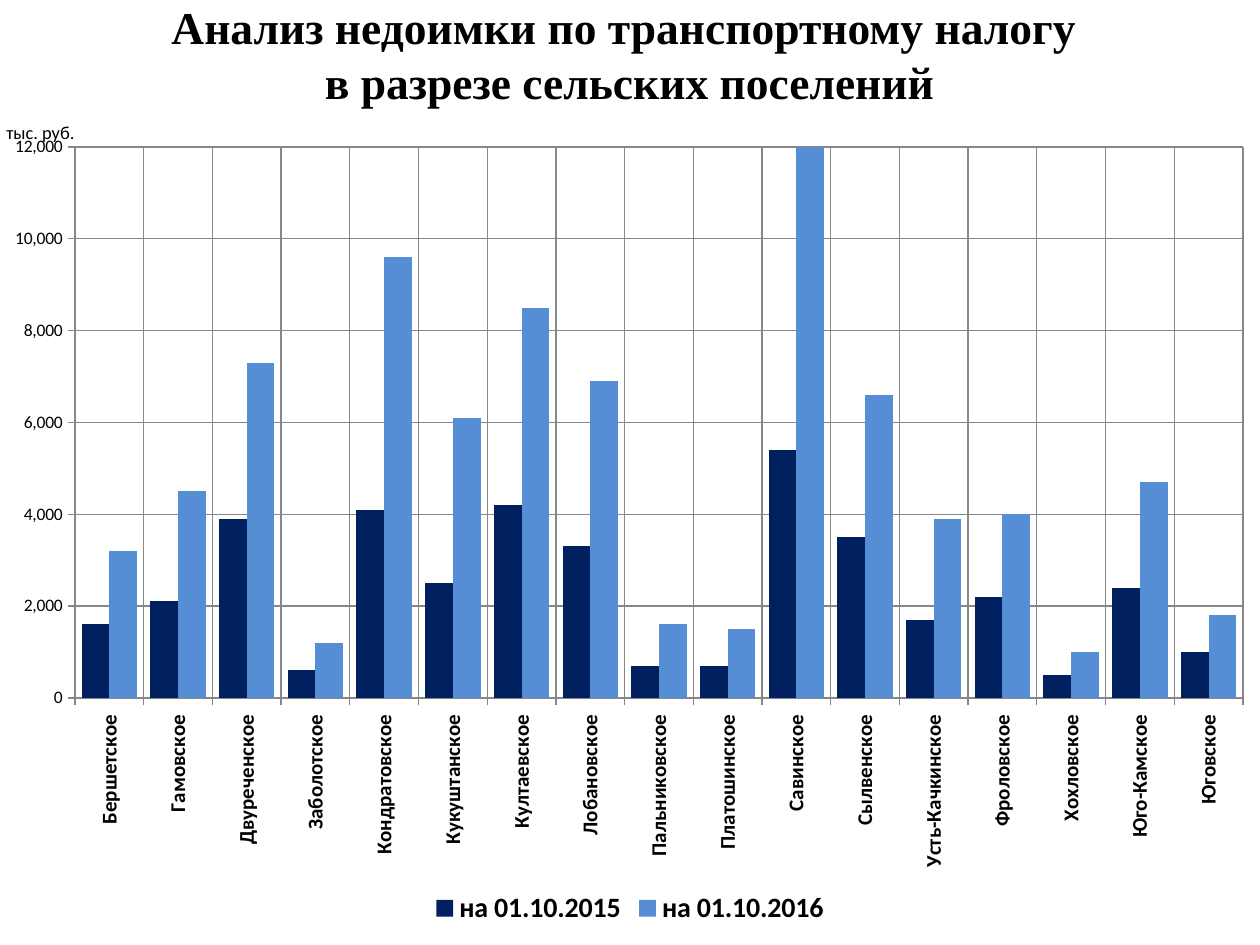
from lxml import etree
from pptx import Presentation
from pptx.chart.data import CategoryChartData as ChartData
from pptx.dml.color import RGBColor
from pptx.enum.chart import XL_CHART_TYPE as ChartType, XL_LEGEND_POSITION as LegendPlace
from pptx.enum.chart import XL_TICK_MARK as TickMark
from pptx.enum.text import MSO_ANCHOR as Anchor, PP_ALIGN as Align
from pptx.oxml.ns import qn
from pptx.util import Pt

PX = 914400 / 126
BLACK, GRID = "000000", "878787"
TITLE = "Анализ недоимки по транспортному налогу \nв разрезе сельских поселений"
UNIT = "тыс. руб."
SERIES = [("на 01.10.2015", "002060"), ("на 01.10.2016", "558ED5")]
ROWS = [
    ("Бершетское ", 1600, 3200),
    ("Гамовское ", 2100, 4500),
    ("Двуреченское ", 3900, 7300),
    ("Заболотское ", 600, 1200),
    ("Кондратовское ", 4100, 9600),
    ("Кукуштанское ", 2500, 6100),
    ("Култаевское ", 4200, 8500),
    ("Лобановское ", 3300, 6900),
    ("Пальниковское ", 700, 1600),
    ("Платошинское ", 700, 1500),
    ("Савинское ", 5400, 12100),
    ("Сылвенское ", 3500, 6600),
    ("Усть-Качкинское ", 1700, 3900),
    ("Фроловское ", 2200, 4000),
    ("Хохловское ", 500, 1000),
    ("Юго-Камское ", 2400, 4700),
    ("Юговское ", 1000, 1800),
]
WIDTH, HEIGHT = 1260, 945
TITLE_BOX = (0, 0, 1260, 108)
CHART_BOX = (0, 108, 1260, 823)
PLOT_BOX = (75, 147, 1168, 551)
UNIT_PLACE = (3, 117)


def emu(*lengths):
    return [round(length * PX) for length in lengths]


def color(value):
    return RGBColor.from_string(value)


def style(font, size, bold=False, name="Calibri"):
    font.size, font.bold, font.name = Pt(size), bold, name
    font.color.rgb = color(BLACK)


def write(frame, text, align=Align.CENTER, **look):
    para = frame.paragraphs[0]
    para.text = text
    para.alignment = align
    for span in para.runs:
        style(span.font, **look)


def place(parent, index, box, inner=False):
    for old in parent.findall(qn("c:layout")):
        parent.remove(old)
    layout = etree.Element(qn("c:layout"))
    manual = etree.SubElement(layout, qn("c:manualLayout"))
    left, top, *size = box
    chart_left, chart_top, width, height = CHART_BOX
    settings = [("layoutTarget", "inner")] if inner else []
    settings += [("xMode", "edge"), ("yMode", "edge")]
    settings += [("x", (left - chart_left) / width), ("y", (top - chart_top) / height)]
    if size:
        settings += [("w", size[0] / width), ("h", size[1] / height)]
    for tag, value in settings:
        etree.SubElement(manual, qn("c:" + tag)).set("val", str(value))
    parent.insert(index, layout)


def style_axis(axis, size, bold=False):
    style(axis.tick_labels.font, size, bold)
    axis.has_major_gridlines = True
    axis.major_tick_mark = TickMark.OUTSIDE
    axis.minor_tick_mark = TickMark.NONE
    for line in (axis.format.line, axis.major_gridlines.format.line):
        line.color.rgb = color(GRID)
        line.width = Pt(0.75)


def add_title(page):
    box = page.shapes.add_textbox(*emu(*TITLE_BOX))
    frame = box.text_frame
    frame.word_wrap = True
    frame.vertical_anchor = Anchor.MIDDLE
    write(frame, TITLE, size=26, bold=True, name="Times New Roman")


def add_column_chart(page):
    data = ChartData(number_format="#,##0")
    names, *columns = zip(*ROWS)
    data.categories = names
    for (name, fill), values in zip(SERIES, columns):
        data.add_series(name, values)
    chart = page.shapes.add_chart(ChartType.COLUMN_CLUSTERED, *emu(*CHART_BOX), data).chart
    style(chart.font, 18)
    chart.has_title = False
    chart.has_legend = True
    chart.legend.position = LegendPlace.BOTTOM
    chart.legend.include_in_layout = False
    style(chart.legend.font, 16, bold=True)

    plot = chart.plots[0]
    plot.gap_width, plot.overlap = 48, 0
    plot.vary_by_categories = False
    for series, (name, fill) in zip(plot.series, SERIES):
        series.format.fill.solid()
        series.format.fill.fore_color.rgb = color(fill)
        series.invert_if_negative = False

    names_axis, values_axis = chart.category_axis, chart.value_axis
    style_axis(names_axis, 12, bold=True)
    style_axis(values_axis, 10)
    names_axis._element.find(qn("c:txPr")).find(qn("a:bodyPr")).set("rot", "-5400000")
    values_axis.minimum_scale, values_axis.maximum_scale = 0, 12000
    values_axis.major_unit = 2000
    values_axis.tick_labels.number_format = "#,##0"
    values_axis.tick_labels.number_format_is_linked = False

    unit = values_axis.axis_title
    write(unit.text_frame, UNIT, size=10.5)
    body = unit.text_frame._txBody.find(qn("a:bodyPr"))
    body.set("rot", "0")
    body.set("vert", "horz")
    place(unit._element, 1, UNIT_PLACE)
    place(chart._chartSpace.chart.plotArea, 0, PLOT_BOX, inner=True)


def main():
    deck = Presentation()
    deck.slide_width, deck.slide_height = emu(WIDTH, HEIGHT)
    page = deck.slides.add_slide(deck.slide_layouts[6])
    add_title(page)
    add_column_chart(page)
    deck.save("out.pptx")


if __name__ == "__main__":
    main()
